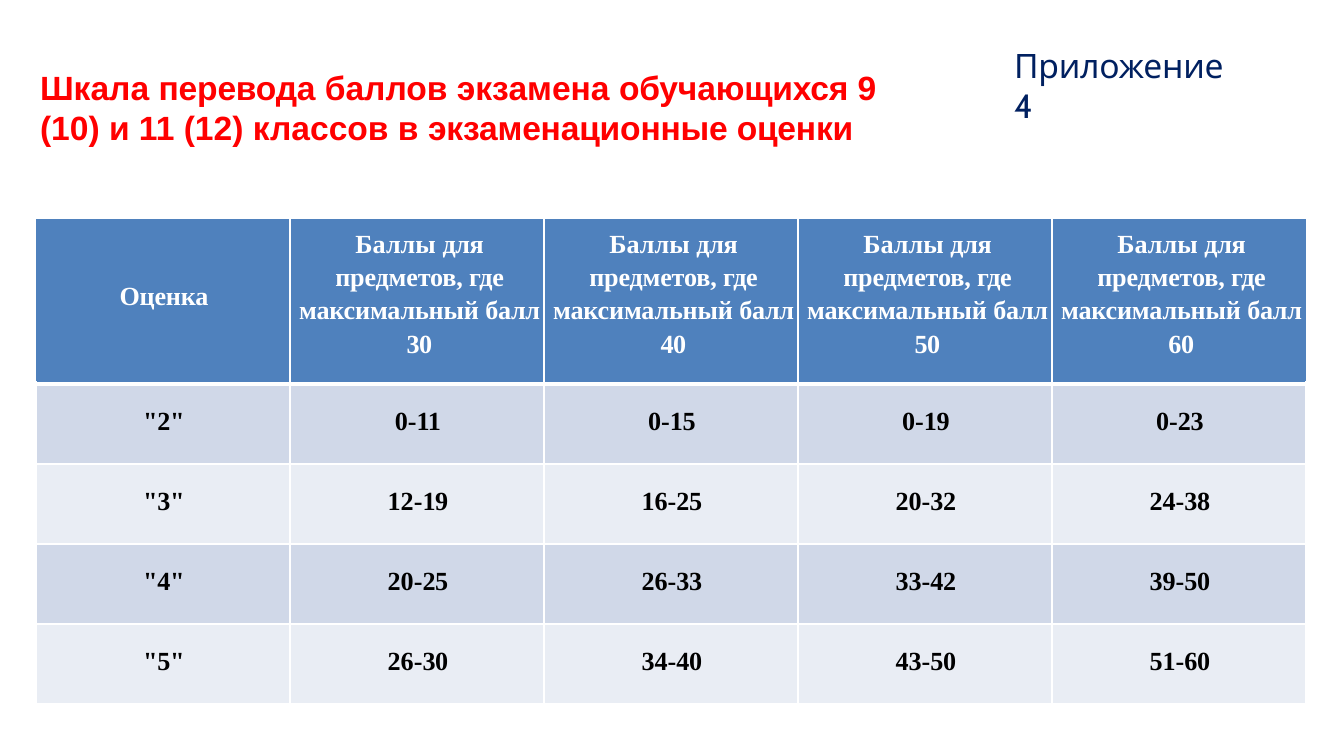
from dataclasses import dataclass
from typing import NamedTuple

from lxml.etree import SubElement
from pptx import Presentation
from pptx.dml.color import RGBColor
from pptx.enum.text import MSO_ANCHOR, MSO_AUTO_SIZE, PP_ALIGN
from pptx.oxml.ns import qn
from pptx.util import Emu, Pt

PAGE_WIDTH, PAGE_HEIGHT = 1344, 756
EMU_PER_PX = 9144000 / PAGE_WIDTH
COLORS = {
    "heading": "FF0000",
    "appendix": "002060",
    "header": "4F81BD",
    "band_dark": "D0D8E8",
    "band_light": "E9EDF4",
    "white": "FFFFFF",
    "black": "000000",
}


class Span(NamedTuple):
    text: str
    spacing: int = 0  # hundredths of a point


class Box(NamedTuple):
    left: int
    top: int
    width: int
    height: int


@dataclass
class CellStyle:
    fill: str
    color: str
    margin_top: int
    indent: int = 2
    line_spacing: float = 1.0


HEADING_BOX = Box(38, 65, 844, 84)
APPENDIX_BOX = Box(1012, 43, 228, 45)
TABLE_BOX = Box(36, 218, 1270, 486)
HEADER_HEIGHT, ROW_HEIGHT = 166, 80
ROW_LINES = [1.5, 3, 1, 1.5, 1, 1]
COLUMN_LINE = 1.5

HEADING = [
    [Span("Шкала "), Span("перевода ", -10), Span("баллов экзамена "),
     Span("обучающихся ", -10), Span("9", -50)],
    [Span("(10) и 11 (12) классов в "), Span("экзаменационные оценки", -10)],
]
MAXIMUM_SCORES = [30, 40, 50, 60]
GRADES = {
    '"2"': ["0-11", "0-15", "0-19", "0-23"],
    '"3"': ["12-19", "16-25", "20-32", "24-38"],
    '"4"': ["20-25", "26-33", "33-42", "39-50"],
    '"5"': ["26-30", "34-40", "43-50", "51-60"],
}
CORNER_STYLE = CellStyle("header", "white", 64)
HEADER_STYLE = CellStyle("header", "white", 8, indent=5, line_spacing=1.15)
BAND_STYLES = [CellStyle(band, "black", 23) for band in ("band_dark", "band_light")]


def px(length: int) -> Emu:
    return Emu(round(length * EMU_PER_PX))


def rgb(name: str) -> RGBColor:
    return RGBColor.from_string(COLORS[name])


def write_para(para, spans: list[Span], *, font: str, size: int, color: str,
               bold: bool = False, align=PP_ALIGN.LEFT, indent: int = 2,
               line_spacing: float = 1.0) -> None:
    properties = para._p.get_or_add_pPr()
    properties.set("marL", str(px(indent)))
    properties.set("indent", "0")
    para.alignment = align
    para.line_spacing = line_spacing
    for text, spacing in spans:
        span = para.add_run()
        span.text = text
        span.font.name = font
        span.font.size = Pt(size)
        span.font.bold = bold
        span.font.color.rgb = rgb(color)
        span.font._element.set("spc", str(spacing))


def prepare_frame(frame) -> None:
    frame.word_wrap = True
    frame.auto_size = MSO_AUTO_SIZE.SHAPE_TO_FIT_TEXT
    frame.vertical_anchor = MSO_ANCHOR.TOP
    frame.margin_left = frame.margin_right = frame.margin_bottom = 0
    frame.margin_top = px(2)


def set_borders(cell, widths: dict[str, float]) -> None:
    """Draw white cell edges in points; a zero width hides the edge."""
    properties = cell._tc.get_or_add_tcPr()
    for side in ("L", "R", "T", "B"):
        line = SubElement(properties, qn(f"a:ln{side}"), w=str(Pt(widths[side])))
        if widths[side]:
            fill = SubElement(line, qn("a:solidFill"))
            SubElement(fill, qn("a:srgbClr"), val=COLORS["white"])
        else:
            SubElement(line, qn("a:noFill"))


def fill_cell(cell, spans: list[Span], style: CellStyle) -> None:
    cell.fill.solid()
    cell.fill.fore_color.rgb = rgb(style.fill)
    cell.margin_left = cell.margin_right = cell.margin_bottom = 0
    cell.margin_top = px(style.margin_top)
    cell.vertical_anchor = MSO_ANCHOR.TOP
    write_para(cell.text_frame.paragraphs[0], spans, font="Times New Roman", size=14,
               color=style.color, bold=True, align=PP_ALIGN.CENTER,
               indent=style.indent, line_spacing=style.line_spacing)


def header_spans(maximum: int) -> list[Span]:
    return [Span("Баллы "), Span("для ", -20), Span("предметов, ", -10),
            Span("где ", -20), Span("максимальный ", -10), Span(f"балл {maximum}", -20)]


def score_spans(score: str) -> list[Span]:
    low, high = score.split("-")
    return [Span(f"{low}-"), Span(high, -20)]


def add_grade_table(page) -> None:
    rows = [[[Span("Оценка", -10)], *map(header_spans, MAXIMUM_SCORES)]]
    rows += [[[Span(grade, -20)], *map(score_spans, scores)]
             for grade, scores in GRADES.items()]
    last = len(rows[0]) - 1
    table = page.shapes.add_table(len(rows), last + 1, *map(px, TABLE_BOX)).table
    table.first_row = table.horz_banding = False
    for column in table.columns:
        column.width = px(TABLE_BOX.width // (last + 1))
    for r, row in enumerate(rows):
        table.rows[r].height = px(ROW_HEIGHT if r else HEADER_HEIGHT)
        for c, spans in enumerate(row):
            if r:
                style = BAND_STYLES[(r - 1) % 2]
            else:
                style = HEADER_STYLE if c else CORNER_STYLE
            cell = table.cell(r, c)
            set_borders(cell, {
                "L": COLUMN_LINE if r or c else 0,
                "R": COLUMN_LINE if r or c < last else 0,
                "T": ROW_LINES[r],
                "B": ROW_LINES[r + 1],
            })
            fill_cell(cell, spans, style)


def add_heading(page) -> None:
    frame = page.shapes.add_textbox(*map(px, HEADING_BOX)).text_frame
    prepare_frame(frame)
    for i, spans in enumerate(HEADING):
        para = frame.add_paragraph() if i else frame.paragraphs[0]
        write_para(para, spans, font="Arial", size=18, color="heading", bold=True)


def format_title(page) -> None:
    title = page.shapes.title
    title.left, title.top, title.width, title.height = map(px, APPENDIX_BOX)
    prepare_frame(title.text_frame)
    write_para(title.text_frame.paragraphs[0], [Span("Приложение ", -10), Span("4", -50)],
               font="Cabin", size=18, color="appendix")


def main() -> None:
    deck = Presentation()
    deck.slide_width, deck.slide_height = px(PAGE_WIDTH), px(PAGE_HEIGHT)
    page = deck.slides.add_slide(deck.slide_layouts[5])
    add_grade_table(page)
    add_heading(page)
    format_title(page)
    deck.save("out.pptx")


if __name__ == "__main__":
    main()
